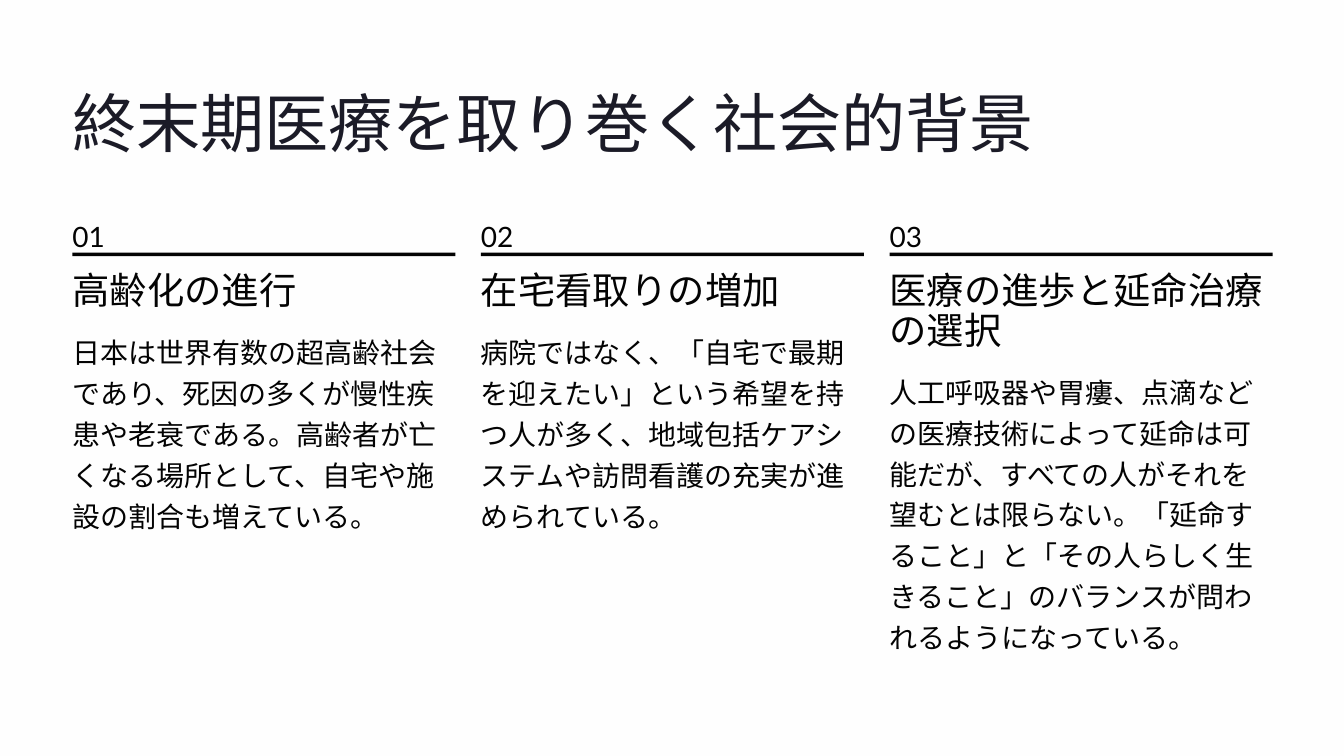
from pptx import Presentation
from pptx.dml.color import RGBColor
from pptx.enum.shapes import MSO_SHAPE
from pptx.enum.text import MSO_ANCHOR, MSO_AUTO_SIZE, PP_ALIGN
from pptx.util import Pt

TITLE = "終末期医療を取り巻く社会的背景"
# number, heading, heading lines, body, body lines
COLUMNS = [
    ("01", "高齢化の進行", 1,
     "日本は世界有数の超高齢社会であり、死因の多くが慢性疾患や老衰である。"
     "高齢者が亡くなる場所として、自宅や施設の割合も増えている。", 5),
    ("02", "在宅看取りの増加", 1,
     "病院ではなく、「自宅で最期を迎えたい」という希望を持つ人が多く、"
     "地域包括ケアシステムや訪問看護の充実が進められている。", 5),
    ("03", "医療の進歩と延命治療の選択", 2,
     "人工呼吸器や胃瘻、点滴などの医療技術によって延命は可能だが、"
     "すべての人がそれを望むとは限らない。「延命すること」と「その人らしく生きること」の"
     "バランスが問われるようになっている。", 7),
]
INK, TITLE_INK, PAPER = "030303", "1B1B27", "FEFEFE"
LEFT, PITCH, COL_W = 62, 350.25, 328.3
NUMBER_Y, RULE_Y, HEADING_Y = 182, 216.5, 233.3
HEADING_LINE, BODY_LINE, BODY_GAP = 34, 35, 14.2


def color(hex_code):
    return RGBColor.from_string(hex_code)


def place(shape, x, y, w, h):
    shape.left, shape.top, shape.width, shape.height = Pt(x), Pt(y), Pt(w), Pt(h)


def set_text(shape, text, font, size, leading, ink=INK, wrap=True):
    tf = shape.text_frame
    tf.margin_left = tf.margin_top = tf.margin_right = tf.margin_bottom = 0
    tf.word_wrap = wrap
    tf.auto_size = MSO_AUTO_SIZE.NONE
    tf.vertical_anchor = MSO_ANCHOR.TOP
    p = tf.paragraphs[0]
    p.text = text
    p.alignment = PP_ALIGN.LEFT
    p.line_spacing = Pt(leading)
    p.font.name, p.font.size = font, Pt(size)
    p.font.color.rgb = color(ink)


def add_text(s, x, y, w, h, *args, **kwargs):
    box = s.shapes.add_textbox(Pt(x), Pt(y), Pt(w), Pt(h))
    set_text(box, *args, **kwargs)


def add_rule(s, x):
    rule = s.shapes.add_shape(MSO_SHAPE.RECTANGLE, Pt(x), Pt(RULE_Y), Pt(COL_W), Pt(3))
    rule.shadow.inherit = False
    rule.fill.solid()
    rule.fill.fore_color.rgb = color(INK)
    rule.line.fill.background()


def add_column(s, x, number, heading, heading_lines, body, body_lines):
    add_text(s, x, NUMBER_Y, 22, 27, number, "Lato", 24, BODY_LINE, wrap=False)
    add_rule(s, x)
    heading_h = heading_lines * HEADING_LINE
    wraps = heading_lines > 1
    add_text(s, x, HEADING_Y, COL_W if wraps else 275, heading_h,
             heading, "Inter", 32, HEADING_LINE, wrap=wraps)
    add_text(s, x, HEADING_Y + heading_h + BODY_GAP, COL_W, body_lines * BODY_LINE,
             body, "Cabin", 24, BODY_LINE)


def main():
    prs = Presentation()
    prs.slide_width, prs.slide_height = Pt(1152), Pt(648)
    s = prs.slides.add_slide(prs.slide_layouts[5])
    s.background.fill.solid()
    s.background.fill.fore_color.rgb = color(PAPER)
    title = s.shapes.title
    place(title, LEFT, 69, 825, 69)
    set_text(title, TITLE, "Inter", 55, 68.5, TITLE_INK, wrap=False)
    for i, column in enumerate(COLUMNS):
        add_column(s, LEFT + i * PITCH, *column)
    prs.save("out.pptx")


if __name__ == "__main__":
    main()
